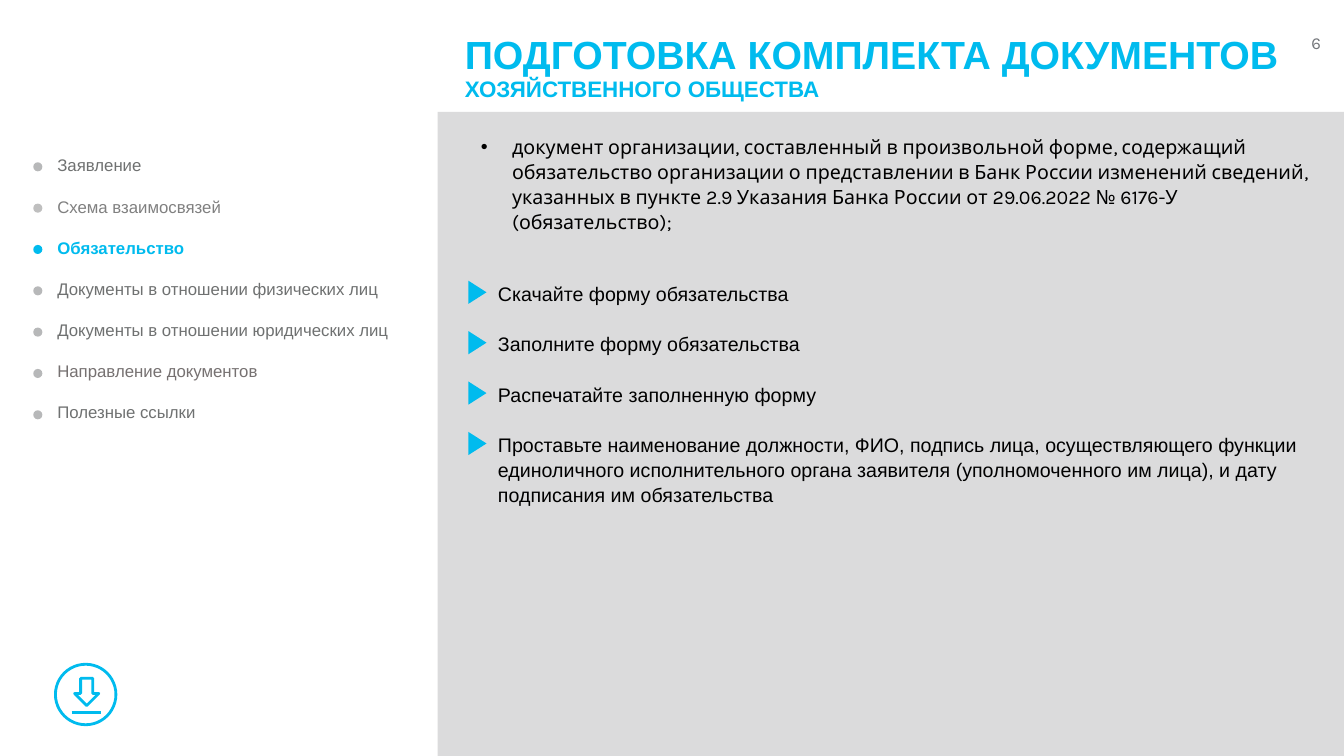
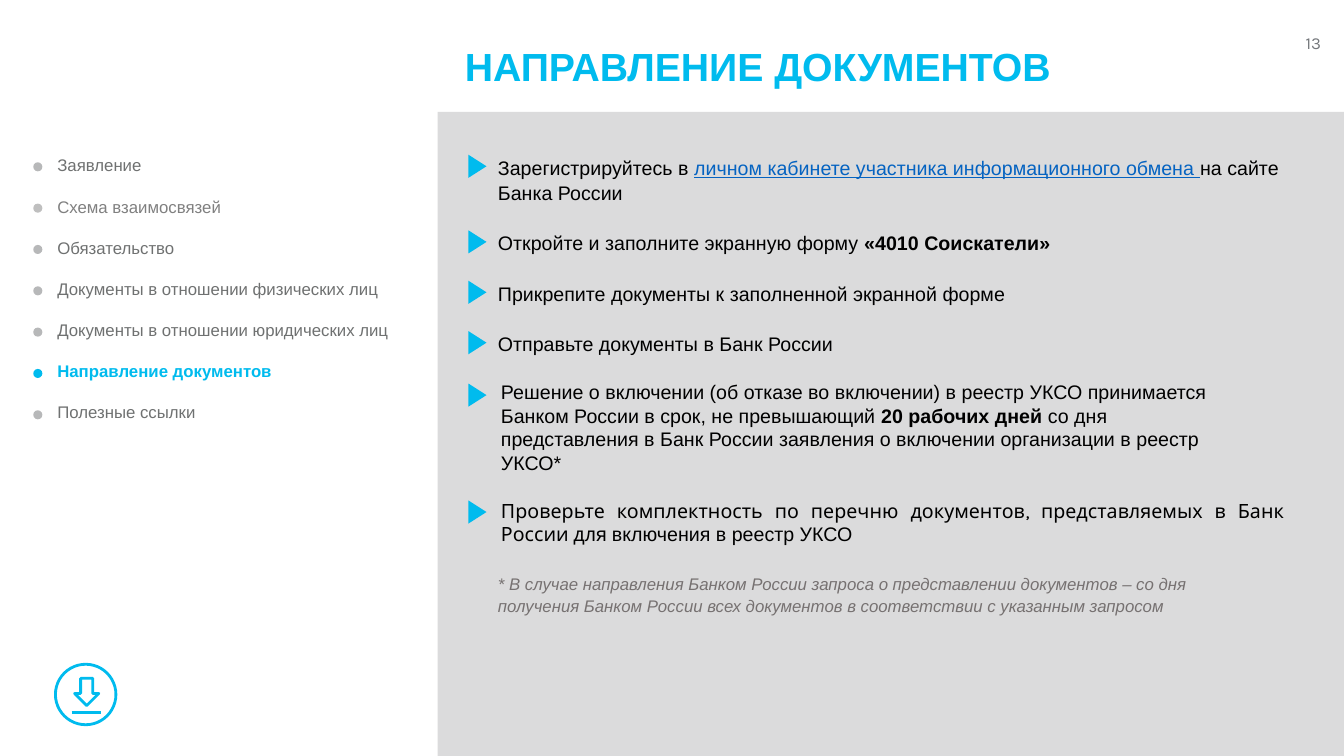
from lxml import etree
from pptx import Presentation
from pptx.dml.color import RGBColor
from pptx.enum.shapes import MSO_CONNECTOR, MSO_SHAPE
from pptx.enum.text import MSO_ANCHOR, MSO_AUTO_SIZE, PP_ALIGN
from pptx.oxml.ns import qn
from pptx.util import Inches, Pt

RECT, OVAL = MSO_SHAPE.RECTANGLE, MSO_SHAPE.OVAL
ARROW, WEDGE = MSO_SHAPE.DOWN_ARROW, MSO_SHAPE.ISOSCELES_TRIANGLE
LINE = MSO_CONNECTOR.STRAIGHT
LEFT, RIGHT, JUST = PP_ALIGN.LEFT, PP_ALIGN.RIGHT, PP_ALIGN.JUSTIFY
MIDDLE = MSO_ANCHOR.MIDDLE
FIXED, GROW = MSO_AUTO_SIZE.NONE, MSO_AUTO_SIZE.SHAPE_TO_FIT_TEXT

HUES = {
    "accent": "00BBEE", "panel": "DBDBDC", "black": "000000", "link": "0563C1",
    "number": "74777B", "menu": "6F7171", "gray": "808080", "note": "767171",
    "dot": "B7B8B9", "pale": "BFBFBF",
}
MENU = [
    ("Заявление", "menu", "dot"),
    ("Схема взаимосвязей", "gray", "pale"),
    ("Обязательство", "menu", "dot"),
    ("Документы в отношении физических лиц", "menu", "dot"),
    ("Документы в отношении юридических лиц", "menu", "dot"),
    ("Направление документов", "note", "dot"),
    ("Полезные ссылки", "menu", "dot"),
]
BOLD = {"bold": True}
ROW = 0.25


def hue(name):
    return RGBColor.from_string(HUES[name])


class Deck:
    def __init__(self):
        self.file = Presentation()
        self.file.slide_width = Inches(13.33)
        self.file.slide_height = Inches(7.5)
        self.slide = None

    def page(self, number, title, active):
        self.slide = self.file.slides.add_slide(self.file.slide_layouts[5])
        self.shape(RECT, 4.34, 1.11, 8.99, 6.39, fill="panel")
        self.title(title)
        self.text(10.78, 0.28, 2.42, 0.3, [number], size=12, font="Karla",
                  color="number", align=RIGHT)
        self.menu(active)
        self.icon()

    def title(self, lines):
        box = self.slide.shapes.title
        box.left, box.top = Inches(4.51), Inches(0.18)
        box.width, box.height = Inches(8.7), Inches(1.01)
        frame = box.text_frame
        frame.text = "\n".join(lines)
        frame.auto_size = FIXED
        frame.vertical_anchor = MIDDLE
        for para, size in zip(frame.paragraphs, (28, 16)):
            para.alignment = LEFT
            para.line_spacing = 0.9
            self.style(para.runs[0], size, "Arial", "accent", bold=True)

    def style(self, run, size, font, color, bold=False, italic=False, under=False):
        face = run.font
        face.size, face.name = Pt(size), font
        face.color.rgb = hue(color)
        face.bold, face.italic, face.underline = bold, italic, under

    def text(self, x, y, w, h, paras, size=14, font="Arial", color="black",
             align=LEFT, pitch=1.0, gap=0, indent=0, hang=0, bullet=None):
        box = self.slide.shapes.add_textbox(Inches(x), Inches(y), Inches(w), Inches(h))
        frame = box.text_frame
        frame.word_wrap = True
        frame.auto_size = GROW
        for index, parts in enumerate(paras):
            para = frame.paragraphs[0] if index == 0 else frame.add_paragraph()
            para.alignment = align
            para.line_spacing = pitch
            para.space_before = Pt(gap if index else 0)
            props = para._p.get_or_add_pPr()
            props.set("marL", str(Inches(indent)))
            props.set("indent", str(Inches(-hang)))
            if bullet:
                etree.SubElement(props, qn("a:buFont")).set("typeface", "Arial")
                etree.SubElement(props, qn("a:buChar")).set("char", bullet)
            for part in [parts] if isinstance(parts, str) else parts:
                words, extra = (part, {}) if isinstance(part, str) else part
                run = para.add_run()
                run.text = words
                self.style(run, **{"size": size, "font": font, "color": color, **extra})

    def shape(self, kind, x, y, w, h, fill=None, line=None):
        item = self.slide.shapes.add_shape(kind, Inches(x), Inches(y), Inches(w), Inches(h))
        item.shadow.inherit = False
        if fill:
            item.fill.solid()
            item.fill.fore_color.rgb = hue(fill)
        else:
            item.fill.background()
        if line:
            item.line.color.rgb = hue(line)
            item.line.width = Pt(2)
        else:
            item.line.fill.background()
        return item

    def rule(self, x, y, w):
        item = self.slide.shapes.add_connector(
            LINE, Inches(x), Inches(y), Inches(x + w), Inches(y))
        item.line.color.rgb = hue("accent")
        item.line.width = Pt(2)
        etree.SubElement(item._element.spPr, qn("a:effectLst"))

    def icon(self):
        self.shape(OVAL, 0.55, 6.59, 0.6, 0.6, line="accent")
        self.shape(ARROW, 0.74, 6.73, 0.24, 0.27, line="accent")
        self.rule(0.71, 7.07, 0.29)

    def menu(self, active):
        paras = []
        for index, (label, color, dot) in enumerate(MENU):
            live = label == active
            paras.append([(label, {"color": "accent" if live else color, "bold": live})])
            self.shape(OVAL, 0.33, 1.61 + 0.41 * index, 0.09, 0.09,
                       fill="accent" if live else dot)
        self.text(0.47, 1.49, 3.69, 2.78, paras, size=12, gap=15)

    def mark(self, y):
        self.shape(WEDGE, 4.62, y, 0.23, 0.18, fill="accent").rotation = 90

    def steps(self, y, items):
        row = 0
        for rows, _ in items:
            self.mark(y + 0.08 + row * ROW)
            row += rows + 1
        self.text(4.34, y, 8.99, (row - 1) * ROW + 0.1, [parts for _, parts in items],
                  pitch=1.07, gap=18, indent=0.5)


def main():
    deck = Deck()

    deck.page("6", ["ПОДГОТОВКА КОМПЛЕКТА ДОКУМЕНТОВ", "ХОЗЯЙСТВЕННОГО ОБЩЕСТВА"],
              "Обязательство")
    deck.text(4.17, 1.27, 8.99, 1.11, [
        "документ организации, составленный в произвольной форме, содержащий "
        "обязательство организации о представлении в Банк России изменений сведений, "
        "указанных в пункте 2.9 Указания Банка России от 29.06.2022 № 6176-У "
        "(обязательство);",
    ], font="Karla", pitch=1.07, indent=0.81, hang=0.31, bullet="•")
    deck.steps(2.73, [
        (1, "Скачайте форму обязательства"),
        (1, "Заполните форму обязательства"),
        (1, "Распечатайте заполненную форму"),
        (3, "Проставьте наименование должности, ФИО, подпись лица, осуществляющего "
            "функции единоличного исполнительного органа заявителя (уполномоченного "
            "им лица), и дату подписания им обязательства"),
    ])

    deck.page("13", ["НАПРАВЛЕНИЕ ДОКУМЕНТОВ"], "Направление документов")
    deck.steps(1.48, [
        (2, ["Зарегистрируйтесь в ",
             ("личном кабинете участника информационного обмена ",
              {"color": "link", "under": True}),
             "на сайте Банка России"]),
        (1, ["Откройте и заполните экранную форму ", ("«4010 Соискатели»", BOLD)]),
        (1, "Прикрепите документы к заполненной экранной форме"),
        (1, "Отправьте документы в Банк России"),
    ])
    deck.mark(3.83)
    deck.text(4.87, 3.72, 7.59, 1.04, [[
        "Решение о включении (об отказе во включении) в реестр УКСО принимается "
        "Банком России в срок, не превышающий ",
        ("20 рабочих дней", BOLD),
        " со дня представления в Банк России заявления о включении организации "
        "в реестр УКСО*",
    ]])
    deck.mark(4.99)
    deck.text(4.87, 4.9, 7.97, 0.57, [[
        ("Проверьте комплектность по перечню документов, представляемых в Банк "
         "России для ", {"font": "Karla"}),
        "включения в реестр УКСО",
    ]], align=JUST)
    deck.text(4.34, 5.63, 7.62, 0.53, [[
        ("* В случае направления Банком России запроса о представлении документов – "
         "со дня получения Банком России всех документов в соответствии с указанным "
         "запросом", {"italic": True}),
    ]], size=12, color="note", pitch=1.07, indent=0.5)

    deck.file.save("out.pptx")


if __name__ == "__main__":
    main()
